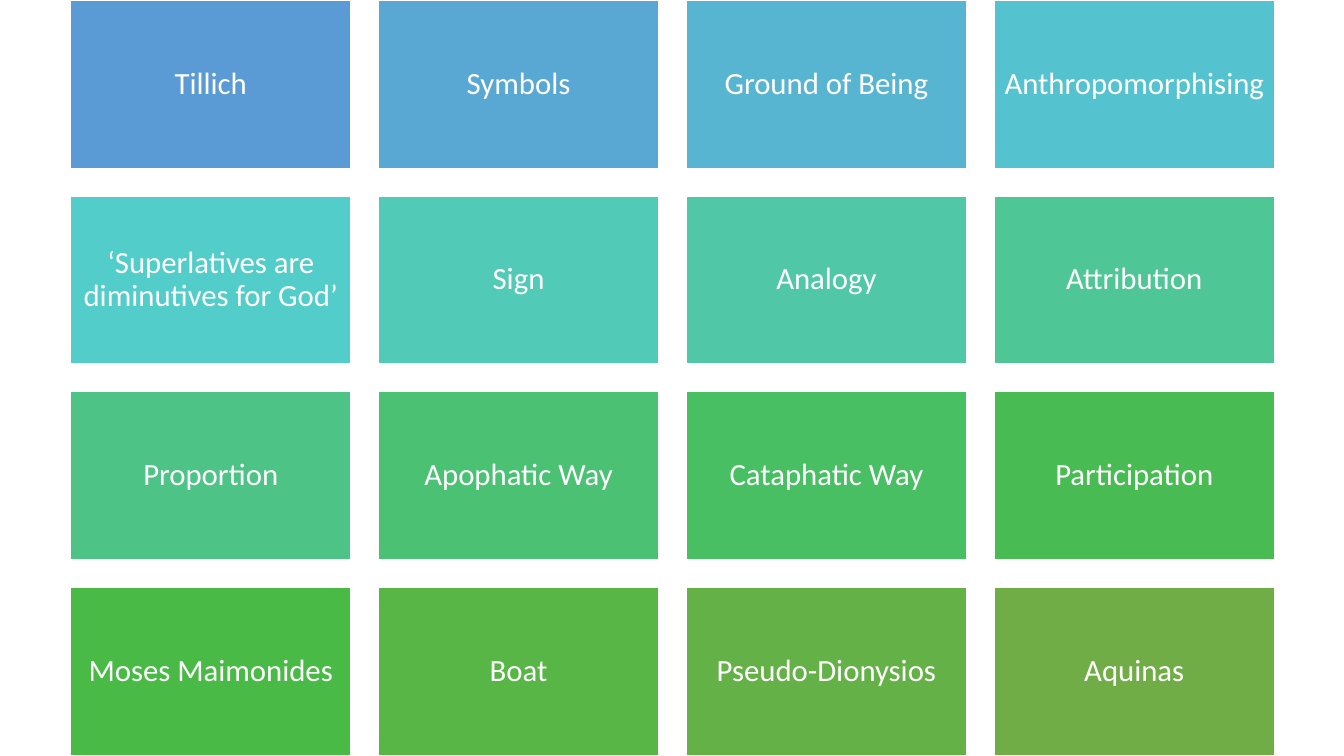
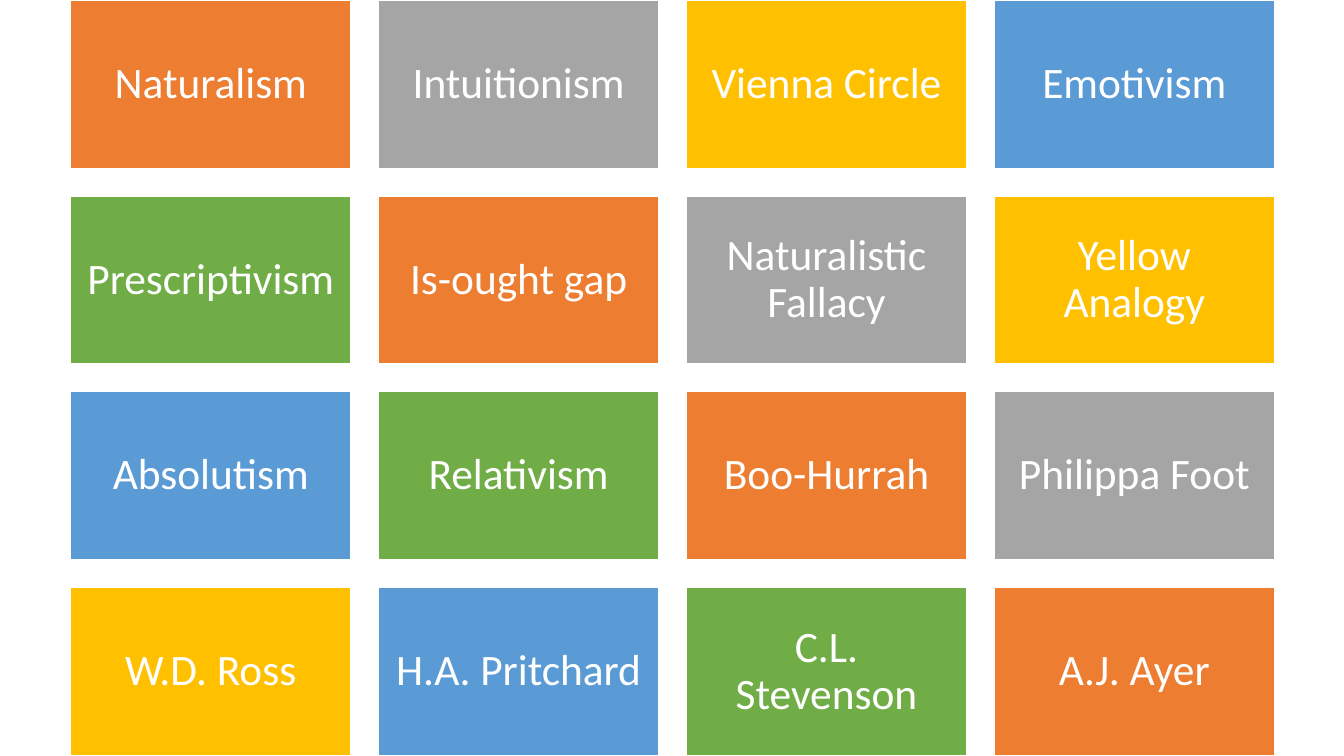
import colorsys
import itertools
from dataclasses import dataclass

import pptx
import pptx.dml.color
import pptx.enum.shapes
import pptx.enum.text
import pptx.util

Inches = pptx.util.Inches


@dataclass(frozen=True)
class Theme:
    font: str = "Calibri"
    white: str = "FFFFFF"
    orange: str = "ED7D31"
    grey: str = "A5A5A5"
    gold: str = "FFC000"
    blue: str = "5B9BD5"
    green: str = "70AD47"
    small_text: int = 22
    large_text: int = 31
    small_inset: float = 0.09
    large_inset: float = 0.13
    line_spacing: float = 0.9


THEME = Theme()
PAGE_WIDTH, PAGE_HEIGHT = 13.33, 7.5
COLUMNS, ROWS = 4, 4
TILE_WIDTH, TILE_HEIGHT = 2.78, 1.67
GRID_LEFT, GRID_WIDTH = 0.7, 11.94
COLUMN_STEP = (GRID_WIDTH - TILE_WIDTH) / (COLUMNS - 1)
ROW_STEP = (PAGE_HEIGHT - TILE_HEIGHT) / (ROWS - 1)

RELIGIOUS_LANGUAGE = [
    "Tillich", "Symbols", "Ground of Being", "Anthropomorphising",
    "‘Superlatives are diminutives for God’", "Sign", "Analogy", "Attribution",
    "Proportion", "Apophatic Way", "Cataphatic Way", "Participation",
    "Moses Maimonides", "Boat", "Pseudo-Dionysios", "Aquinas",
]
META_ETHICS = [
    "Naturalism", "Intuitionism", "Vienna Circle", "Emotivism",
    "Prescriptivism", "Is-ought gap", "Naturalistic Fallacy", "Yellow Analogy",
    "Absolutism", "Relativism", "Boo-Hurrah", "Philippa Foot",
    "W.D. Ross", "H.A. Pritchard", "C.L. Stevenson", "A.J. Ayer",
]


def rgb(value):
    return pptx.dml.color.RGBColor.from_string(value)


def hue_scale(start, end, count):
    first, last = (
        colorsys.rgb_to_hls(*(channel / 255 for channel in rgb(value)))
        for value in (start, end)
    )
    colours = []
    for index in range(count):
        share = index / (count - 1)
        mixed = (a + (b - a) * share for a, b in zip(first, last))
        channels = colorsys.hls_to_rgb(*mixed)
        colours.append("".join(f"{round(channel * 255):02X}" for channel in channels))
    return colours


def add_tile(page, left, top, label, colour, text_size, inset):
    box = page.shapes.add_shape(
        pptx.enum.shapes.MSO_SHAPE.RECTANGLE,
        Inches(left), Inches(top), Inches(TILE_WIDTH), Inches(TILE_HEIGHT),
    )
    box.shadow.inherit = False
    box.fill.solid()
    box.fill.fore_color.rgb = rgb(colour)
    box.line.color.rgb = rgb(THEME.white)
    box.line.width = pptx.util.Pt(1)

    frame = box.text_frame
    frame.word_wrap = True
    frame.vertical_anchor = pptx.enum.text.MSO_ANCHOR.MIDDLE
    frame.margin_left = frame.margin_right = Inches(inset)
    frame.margin_top = frame.margin_bottom = Inches(inset)
    frame.text = label
    para = frame.paragraphs[0]
    para.alignment = pptx.enum.text.PP_ALIGN.CENTER
    para.line_spacing = THEME.line_spacing
    span = para.runs[0]
    span.font.name = THEME.font
    span.font.size = pptx.util.Pt(text_size)
    span.font.color.rgb = rgb(THEME.white)


def add_tile_page(deck, labels, colours, text_size, inset):
    page = deck.slides.add_slide(deck.slide_layouts.get_by_name("Blank"))
    for index, (label, colour) in enumerate(zip(labels, colours)):
        row, column = divmod(index, COLUMNS)
        left = GRID_LEFT + column * COLUMN_STEP
        add_tile(page, left, row * ROW_STEP, label, colour, text_size, inset)


def main():
    deck = pptx.Presentation()
    deck.slide_width = Inches(PAGE_WIDTH)
    deck.slide_height = Inches(PAGE_HEIGHT)

    scale = hue_scale(THEME.blue, THEME.green, len(RELIGIOUS_LANGUAGE))
    add_tile_page(deck, RELIGIOUS_LANGUAGE, scale, THEME.small_text, THEME.small_inset)

    accents = itertools.cycle(
        [THEME.orange, THEME.grey, THEME.gold, THEME.blue, THEME.green]
    )
    add_tile_page(deck, META_ETHICS, accents, THEME.large_text, THEME.large_inset)

    deck.save("out.pptx")


if __name__ == "__main__":
    main()
